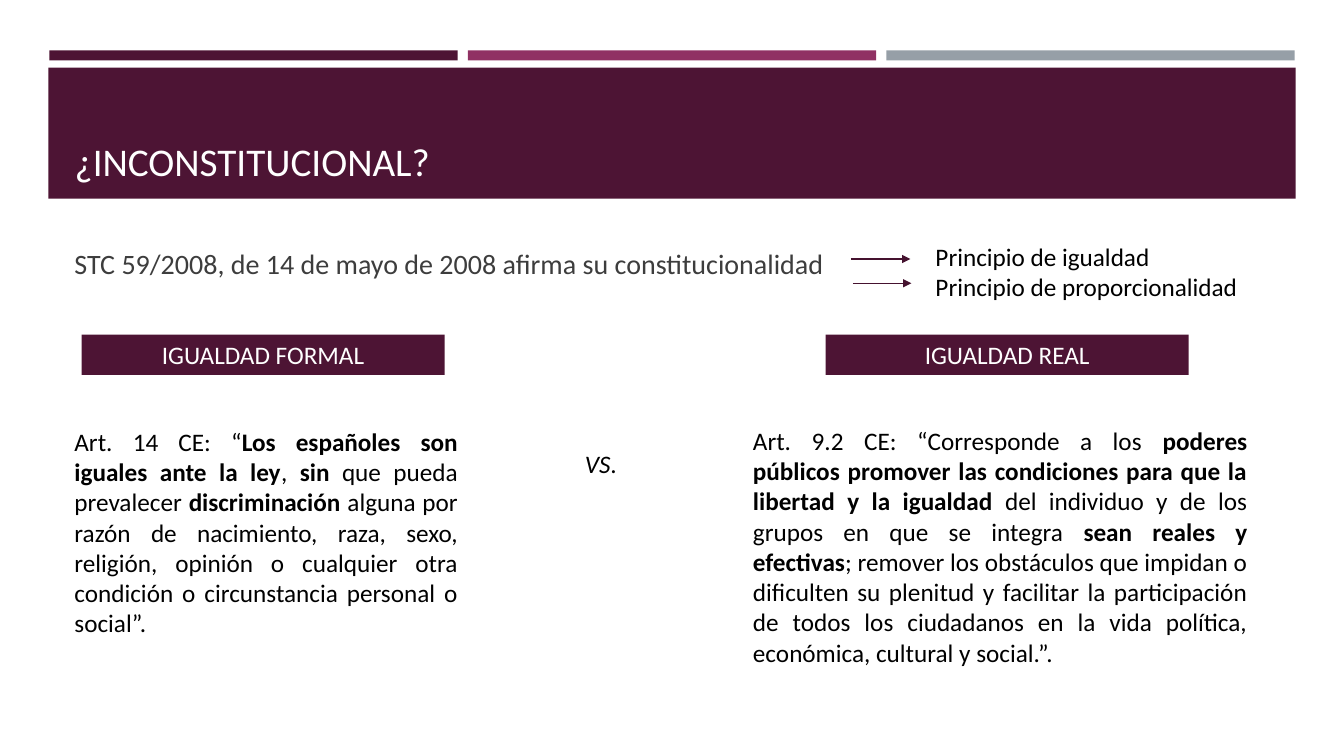
from lxml.etree import SubElement
from pptx import Presentation
from pptx.dml.color import RGBColor
from pptx.enum.shapes import MSO_CONNECTOR as Connector, MSO_SHAPE as Shape
from pptx.enum.text import MSO_ANCHOR as Anchor, MSO_AUTO_SIZE as AutoSize, PP_ALIGN as Align
from pptx.oxml.ns import qn
from pptx.util import Pt

SCALE = 9144
TITLE_ONLY = 5
PLUM = RGBColor(0x4D, 0x14, 0x34)
MAGENTA = RGBColor(0x90, 0x31, 0x63)
STEEL = RGBColor(0x96, 0x9F, 0xA7)
ARROW = RGBColor(0x45, 0x12, 0x2F)
GRAY = RGBColor(0x3D, 0x3D, 0x3D)
BLACK = RGBColor(0, 0, 0)
WHITE = RGBColor(0xFF, 0xFF, 0xFF)

FORMAL_ARTICLE = [
    ("Art. 14 CE: “", {}),
    ("Los españoles son iguales ante la ley", {"bold": True}),
    (", ", {}),
    ("sin", {"bold": True}),
    (" que pueda prevalecer ", {}),
    ("discriminación", {"bold": True}),
    (" alguna por razón de nacimiento, raza, sexo, religión, opinión o cualquier otra "
     "condición o circunstancia personal o social”.", {}),
]
REAL_ARTICLE = [
    ("Art. 9.2 CE: “Corresponde a los ", {}),
    ("poderes públicos promover las condiciones para que la libertad y la igualdad ",
     {"bold": True}),
    ("del individuo y de los grupos en que se integra ", {}),
    ("sean reales y efectivas", {"bold": True}),
    ("; remover los obstáculos que impidan o dificulten su plenitud y facilitar la "
     "participación de todos los ciudadanos en la vida política, económica, cultural y "
     "social.”.", {}),
]


class SlideBuilder:
    font_name = "Calibri"

    def __init__(self, slide):
        self.slide = slide

    def lengths(self, *pixels):
        return [value * SCALE for value in pixels]

    def fill_text(self, shape, paragraphs, size=18, color=BLACK, align=Align.LEFT,
                  anchor=Anchor.TOP):
        frame = shape.text_frame
        frame_format = {"word_wrap": True, "auto_size": AutoSize.NONE, "vertical_anchor": anchor}
        for name, value in frame_format.items():
            setattr(frame, name, value)
        for index, runs in enumerate(paragraphs):
            paragraph = frame.add_paragraph() if index else frame.paragraphs[0]
            paragraph.alignment = align
            for text, emphasis in runs:
                run = paragraph.add_run()
                run.text = text
                run.font.color.rgb = color
                font_format = {"name": self.font_name, "size": Pt(size), "bold": False, **emphasis}
                for name, value in font_format.items():
                    setattr(run.font, name, value)

    def title(self, box, text):
        shape = self.slide.shapes.title
        for name, value in zip(("left", "top", "width", "height"), self.lengths(*box)):
            setattr(shape, name, value)
        self.fill_text(shape, [[(text, {})]], size=28, color=WHITE, anchor=Anchor.BOTTOM)

    def bar(self, box, color):
        shape = self.slide.shapes.add_shape(Shape.RECTANGLE, *self.lengths(*box))
        shape.shadow.inherit = False
        shape.fill.solid()
        shape.fill.fore_color.rgb = color
        shape.line.fill.background()
        return shape

    def heading(self, box, text):
        self.fill_text(self.bar(box, PLUM), [[(text, {})]], color=WHITE,
                       align=Align.CENTER, anchor=Anchor.MIDDLE)

    def text(self, box, paragraphs, **style):
        self.fill_text(self.slide.shapes.add_textbox(*self.lengths(*box)), paragraphs, **style)

    def arrow(self, left, right, y):
        connector = self.slide.shapes.add_connector(
            Connector.STRAIGHT, *self.lengths(left, y, right, y))
        connector.line.color.rgb = ARROW
        connector.line.width = Pt(1)
        properties = connector._element.spPr
        SubElement(properties.find(qn("a:ln")), qn("a:tailEnd"), type="triangle")
        SubElement(properties, qn("a:effectLst"))


def main():
    presentation = Presentation()
    presentation.slide_width = 1333 * SCALE
    presentation.slide_height = 750 * SCALE
    slide = presentation.slides.add_slide(presentation.slide_layouts[TITLE_ONLY])
    builder = SlideBuilder(slide)

    for column, color in enumerate((PLUM, MAGENTA, STEEL)):
        builder.bar((49 + 415 * column, 50, 405, 10), color)
    band = builder.bar((48, 67, 1237, 130), PLUM)
    slide.shapes.title._element.addprevious(band._element)
    builder.title((64, 77, 1206, 111), "¿INCONSTITUCIONAL?")

    ruling = "STC 59/2008, de 14 de mayo de 2008 afirma su constitucionalidad"
    builder.text((64, 240, 1206, 400), [[(ruling, {})]], size=20, color=GRAY)
    builder.arrow(844, 903, 257)
    builder.arrow(846, 904, 281)
    principles = ("Principio de igualdad", "Principio de proporcionalidad")
    builder.text((918, 234, 339, 71), [[(principle, {})] for principle in principles])

    builder.text((64, 418, 400, 283), [FORMAL_ARTICLE], align=Align.JUSTIFY)
    builder.text((737, 417, 510, 313), [REAL_ARTICLE], align=Align.JUSTIFY)
    builder.text((526, 440, 140, 40), [[("VS", {"italic": True}), (".", {})]], align=Align.CENTER)
    builder.heading((81, 332, 360, 40), "IGUALDAD FORMAL")
    builder.heading((819, 332, 360, 40), "IGUALDAD REAL")

    presentation.save("out.pptx")


if __name__ == "__main__":
    main()
